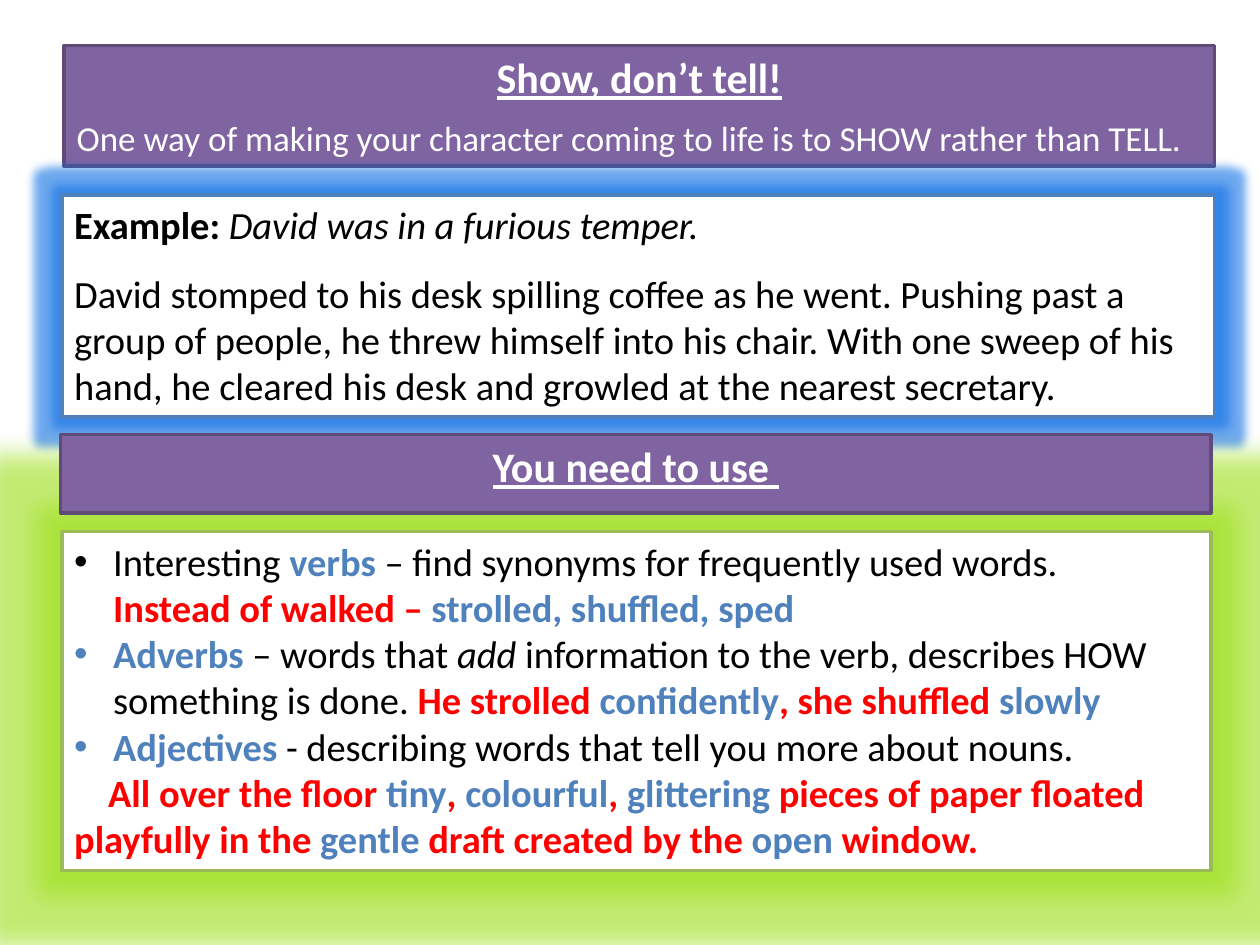
from dataclasses import dataclass

import pptx
import pptx.dml.color
import pptx.enum.shapes
import pptx.enum.text
import pptx.oxml
import pptx.oxml.ns
import pptx.util
from pptx.util import Inches, Pt


@dataclass(frozen=True)
class Theme:
    font: str = "Calibri"
    white: str = "FFFFFF"
    black: str = "000000"
    red: str = "FF0000"
    blue: str = "4F81BD"
    green: str = "9BBB59"
    purple: str = "8064A2"
    purple_edge: str = "5F4A78"
    blue_glow: str = "0F70E5"
    green_glow: str = "9BDF17"
    title_size: int = 24
    body_size: int = 22
    lead_size: int = 20


THEME = Theme()
BODY = {"size": THEME.body_size, "color": THEME.black}
STYLES = {
    "title": {"size": THEME.title_size, "color": THEME.white,
              "bold": True, "underline": True},
    "lead": {"size": THEME.lead_size, "color": THEME.white},
    "plain": BODY,
    "strong": BODY | {"bold": True},
    "italic": BODY | {"italic": True},
    "example": BODY | {"color": THEME.red, "bold": True},
    "key": BODY | {"color": THEME.blue, "bold": True},
}
LINE_BREAK = ("break", "")

EXAMPLE_TEXT = (
    "David stomped to his desk spilling coffee as he went. Pushing past a "
    "group of people, he threw himself into his chair. With one sweep of his "
    "hand, he cleared his desk and growled at the nearest secretary."
)
WORD_TYPES = [
    [("plain", "Interesting "), ("key", "verbs "),
     ("plain", "– find synonyms for frequently used words."), LINE_BREAK,
     ("example", "Instead of walked – "), ("key", "strolled, shuffled, sped")],
    [("key", "Adverbs"), ("plain", " – words that "), ("italic", "add"),
     ("plain", " information to the verb, describes HOW something is done. "),
     ("example", "He strolled "), ("key", "confidently"),
     ("example", ", she shuffled "), ("key", "slowly")],
    [("key", "Adjectives"),
     ("plain", " - describing words that tell you more about nouns.")],
]
CLOSING_SENTENCE = [
    ("example", "All over the floor "), ("key", "tiny"), ("example", ", "),
    ("key", "colourful"), ("example", ", "), ("key", "glittering"),
    ("example", " pieces of paper floated playfully in the "),
    ("key", "gentle"), ("example", " draft created by the "),
    ("key", "open"), ("example", " window."),
]


def rgb(value):
    return pptx.dml.color.RGBColor.from_string(value)


def add_panel(page, box, fill, edge):
    """Add an outlined rectangle with top-aligned, wrapping text."""
    panel = page.shapes.add_shape(
        pptx.enum.shapes.MSO_SHAPE.RECTANGLE, *map(Inches, box))
    panel.shadow.inherit = False
    panel.fill.solid()
    panel.fill.fore_color.rgb = rgb(fill)
    panel.line.color.rgb = rgb(edge)
    panel.line.width = Pt(2)
    panel.text_frame.word_wrap = True
    panel.text_frame.vertical_anchor = pptx.enum.text.MSO_ANCHOR.TOP
    return panel


def add_glow(panel, color, radius):
    effects = panel._element.spPr.find(pptx.oxml.ns.qn("a:effectLst"))
    effects.append(pptx.oxml.parse_xml(
        f'<a:glow {pptx.oxml.ns.nsdecls("a")} rad="{Inches(radius)}">'
        f'<a:srgbClr val="{color}"><a:alpha val="60000"/></a:srgbClr></a:glow>'))


def write_paragraph(panel, spans, centered=False, space_before=0):
    """Fill the first empty paragraph, or a new one, with styled spans."""
    frame = panel.text_frame
    para = frame.add_paragraph() if frame.text else frame.paragraphs[0]
    align = pptx.enum.text.PP_ALIGN
    para.alignment = align.CENTER if centered else align.LEFT
    para.space_before = Pt(space_before)
    for style, text in spans:
        if (style, text) == LINE_BREAK:
            para.add_line_break()
            continue
        span = para.add_run()
        span.text = text
        span.font.name = THEME.font
        for name, value in STYLES[style].items():
            if name == "color":
                span.font.color.rgb = rgb(value)
            else:
                setattr(span.font, name, Pt(value) if name == "size" else value)
    return para


def set_indent(para, left, first, bullet=False):
    props = para._p.get_or_add_pPr()
    props.set("marL", str(Inches(left)))
    props.set("indent", str(Inches(first)))
    if bullet:
        namespace = pptx.oxml.ns.nsdecls("a")
        props.append(pptx.oxml.parse_xml(
            f'<a:buFont {namespace} typeface="Arial"/>'))
        props.append(pptx.oxml.parse_xml(f'<a:buChar {namespace} char="•"/>'))


def add_heading(page, box, title, lead=None):
    panel = add_panel(page, box, THEME.purple, THEME.purple_edge)
    write_paragraph(panel, [("title", title)], centered=True)
    if lead:
        write_paragraph(panel, [("lead", lead)], space_before=8.5)


def add_example(page, box):
    panel = add_panel(page, box, THEME.white, THEME.blue)
    add_glow(panel, THEME.blue_glow, 0.15)
    write_paragraph(panel, [("strong", "Example: "),
                            ("italic", "David was in a furious temper.")])
    write_paragraph(panel, [("plain", EXAMPLE_TEXT)], space_before=12.8)


def add_word_types(page, box):
    panel = add_panel(page, box, THEME.white, THEME.green)
    add_glow(panel, THEME.green_glow, 0.4)
    for spans in WORD_TYPES:
        set_indent(write_paragraph(panel, spans), 0.31, -0.31, bullet=True)
    set_indent(write_paragraph(panel, CLOSING_SENTENCE), 0, 0.27)


def main():
    deck = pptx.Presentation()
    deck.slide_width, deck.slide_height = Inches(10), Inches(7.5)
    page = deck.slides.add_slide(deck.slide_layouts[6])
    add_heading(
        page, (0.51, 0.36, 9.13, 0.96), "Show, don’t tell!",
        "One way of making your character coming to life is to SHOW "
        "rather than TELL.")
    add_example(page, (0.49, 1.55, 9.15, 1.76))
    add_word_types(page, (0.49, 4.22, 9.12, 2.69))
    add_heading(page, (0.48, 3.45, 9.13, 0.62), "You need to use ")
    deck.save("out.pptx")


if __name__ == "__main__":
    main()
